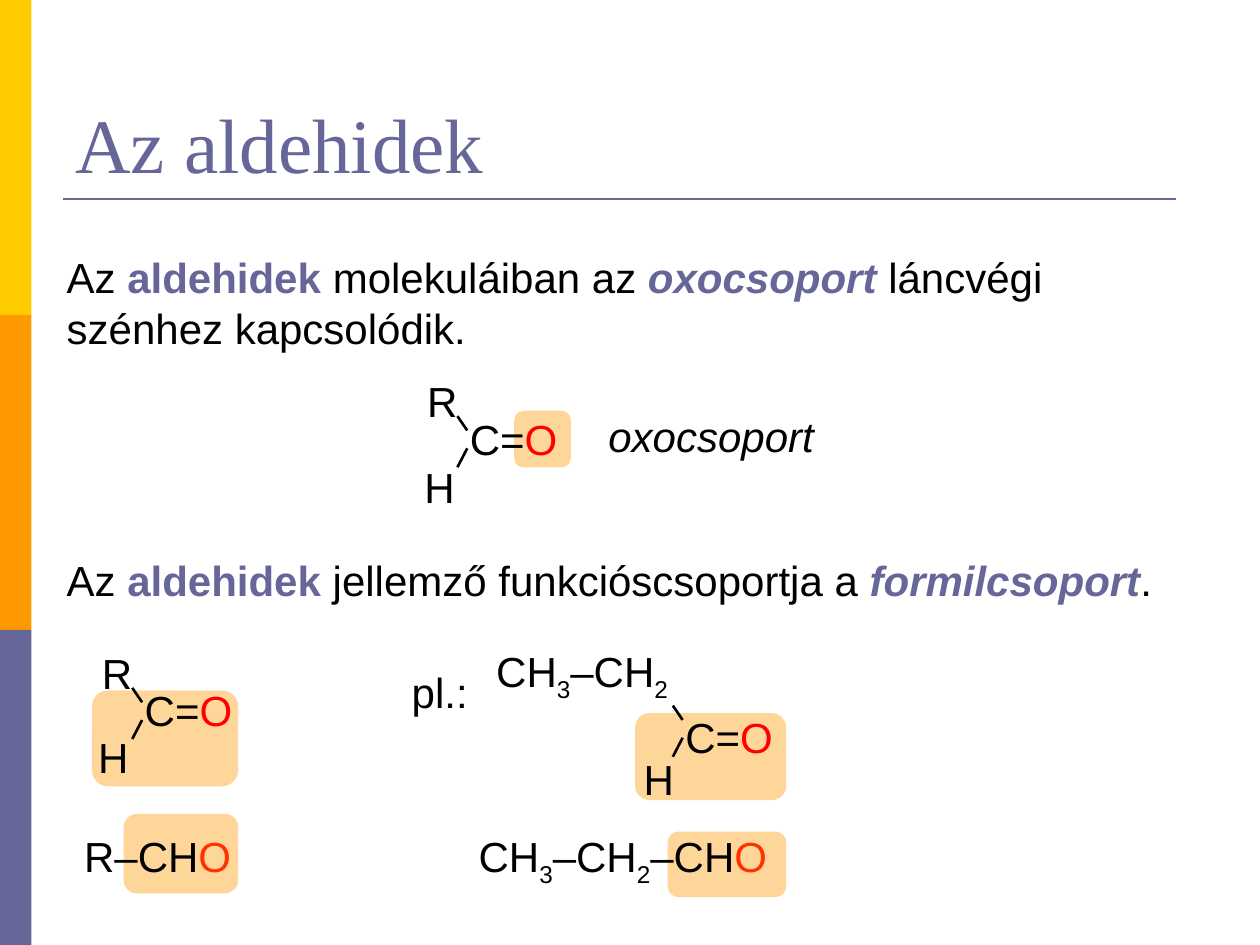
import pptx
import pptx.dml.color
import pptx.enum.shapes
import pptx.enum.text
import pptx.oxml
import pptx.util

Pt = pptx.util.Pt
SHAPES = pptx.enum.shapes.MSO_SHAPE
ANCHOR = pptx.enum.text.MSO_ANCHOR
FIT = pptx.enum.text.MSO_AUTO_SIZE

THEME = {
    "accent": "666699", "ink": "000000", "highlight": "FFD699",
    "oxygen": "FF0000", "formyl_oxygen": "FF3300",
    "stripes": ["FFCC00", "FF9900", "666699"],
    "title_font": "Times New Roman", "body_font": "Arial",
    "title_size": 44, "body_size": 24, "line_height": 28.8, "rule": 1.5,
}
WIDTH, HEIGHT, STRIPE_WIDTH = 720, 540, 18

# Run styles: colour name plus font values
STYLES = {
    "plain": ("ink", {}),
    "term": ("accent", {"bold": True}),
    "group": ("accent", {"bold": True, "italic": True}),
    "label": ("ink", {"italic": True}),
    "oxygen": ("oxygen", {}),
    "formyl_oxygen": ("formyl_oxygen", {}),
    "sub": ("ink", {}),
}

TITLE = [[("Az aldehidek", "title")]]
STATEMENTS = [
    [("Az ", "plain"), ("aldehidek ", "term"), ("molekuláiban az ", "plain"),
     ("oxocsoport", "group"), (" láncvégi szénhez kapcsolódik.", "plain")],
    [("Az ", "plain"), ("aldehidek", "term"),
     (" jellemző funkcióscsoportja a ", "plain"),
     ("formilcsoport", "group"), (".", "plain")],
]
STATEMENT_GAP = 4 * THEME["line_height"]

CARBONYL = [("C=", "plain"), ("O", "oxygen")]
ETHYL = [("CH", "plain"), ("3", "sub"), ("–CH", "plain"), ("2", "sub")]
R, H = [("R", "plain")], [("H", "plain")]

# left, top, width, runs
FORMULAS = [
    (261.4, 231.1, 65, CARBONYL), (237, 209.5, 32, R), (235.4, 258.5, 32, H),
    (75.6, 385.9, 65, CARBONYL), (51.1, 365, 32, R), (49, 413.3, 32, H),
    (384.5, 401.8, 65, CARBONYL), (276.5, 367.9, 116, ETHYL), (360.7, 425.5, 32, H),
    (340.6, 229.7, 133, [("oxocsoport", "label")]),
    (228.2, 375.8, 47, [("pl.:", "plain")]),
    (41, 469.4, 99, [("R–CH", "plain"), ("O", "formyl_oxygen")]),
    (266.4, 473.8, 184, ETHYL + [("–CH", "plain"), ("O", "formyl_oxygen")]),
]

# left, top, width, height
HIGHLIGHTS = [
    (293.8, 234.7, 32.4, 32.4), (52.6, 394.6, 83.5, 54.7),
    (362.9, 407.5, 86.4, 49.7), (70.6, 465.1, 65.5, 45.4),
    (381.6, 475.2, 67.7, 37.4),
]

# Upper outer end of each pair of bonds, and the bonds measured from there
BOND_PAIRS = [(261.4, 237.8), (75.6, 393.1), (384.5, 403.2)]
BONDS = [((5.6, 8.2), (0, 0)), ((5.6, 18.4), (0, 29.2))]


def rgb(value):
    return pptx.dml.color.RGBColor.from_string(value)


def assign(target, values):
    for name, value in values.items():
        setattr(target, name, value)


def add_block(slide, preset, box, color):
    block = slide.shapes.add_shape(preset, *map(Pt, box))
    block.shadow.inherit = False
    block.fill.solid()
    block.fill.fore_color.rgb = rgb(color)
    block.line.fill.background()


def add_line(slide, start, end, color):
    line = slide.shapes.add_connector(
        pptx.enum.shapes.MSO_CONNECTOR.STRAIGHT, *map(Pt, start + end))
    line.line.color.rgb = rgb(color)
    line.line.width = Pt(THEME["rule"])
    line._element.spPr.append(pptx.oxml.parse_xml(
        '<a:effectLst xmlns:a="http://schemas.openxmlformats.org/drawingml/2006/main"/>'))


def add_run(paragraph, text, style):
    run = paragraph.add_run()
    run.text = text
    if style == "title":
        color, font, size, extra = "accent", "title_font", "title_size", {}
    else:
        color, extra = STYLES[style]
        font, size = "body_font", "body_size"
    assign(run.font, {"name": THEME[font], "size": Pt(THEME[size]), **extra})
    run.font.color.rgb = rgb(THEME[color])
    if style == "sub":
        run.font._element.set("baseline", "-25000")


def add_text(slide, box, paragraphs, frame_values, paragraph_values, gap=0):
    frame = slide.shapes.add_textbox(*map(Pt, box)).text_frame
    assign(frame, frame_values)
    for index, runs in enumerate(paragraphs):
        paragraph = frame.add_paragraph() if index else frame.paragraphs[0]
        assign(paragraph, paragraph_values)
        if index:
            paragraph.space_before = Pt(gap)
        for text, style in runs:
            add_run(paragraph, text, style)


def main():
    deck = pptx.Presentation()
    assign(deck, {"slide_width": Pt(WIDTH), "slide_height": Pt(HEIGHT)})
    slide = deck.slides.add_slide(deck.slide_layouts[6])

    stripe_height = HEIGHT / len(THEME["stripes"])
    for index, color in enumerate(THEME["stripes"]):
        add_block(slide, SHAPES.RECTANGLE,
                  (0, index * stripe_height, STRIPE_WIDTH, stripe_height), color)
    add_line(slide, (36, 113.8), (672, 113.8), THEME["accent"])
    for box in HIGHLIGHTS:
        add_block(slide, SHAPES.ROUNDED_RECTANGLE, box, THEME["highlight"])

    add_text(slide, (36, 21.6, 648, 90), TITLE,
             {"word_wrap": True, "vertical_anchor": ANCHOR.BOTTOM}, {})

    body_frame = {"margin_top": Pt(5), "margin_bottom": Pt(2.2)}
    body_line = {"line_spacing": Pt(THEME["line_height"])}
    add_text(slide, (31, 139, 656.6, 211), STATEMENTS,
             {**body_frame, "word_wrap": True}, body_line, STATEMENT_GAP)
    formula_frame = {**body_frame, "word_wrap": False,
                     "auto_size": FIT.SHAPE_TO_FIT_TEXT}
    for left, top, width, runs in FORMULAS:
        add_text(slide, (left, top, width, 36), [runs], formula_frame, body_line)

    for x, y in BOND_PAIRS:
        for start, end in BONDS:
            add_line(slide, (x + start[0], y + start[1]),
                     (x + end[0], y + end[1]), THEME["ink"])
    deck.save("out.pptx")


if __name__ == "__main__":
    main()
